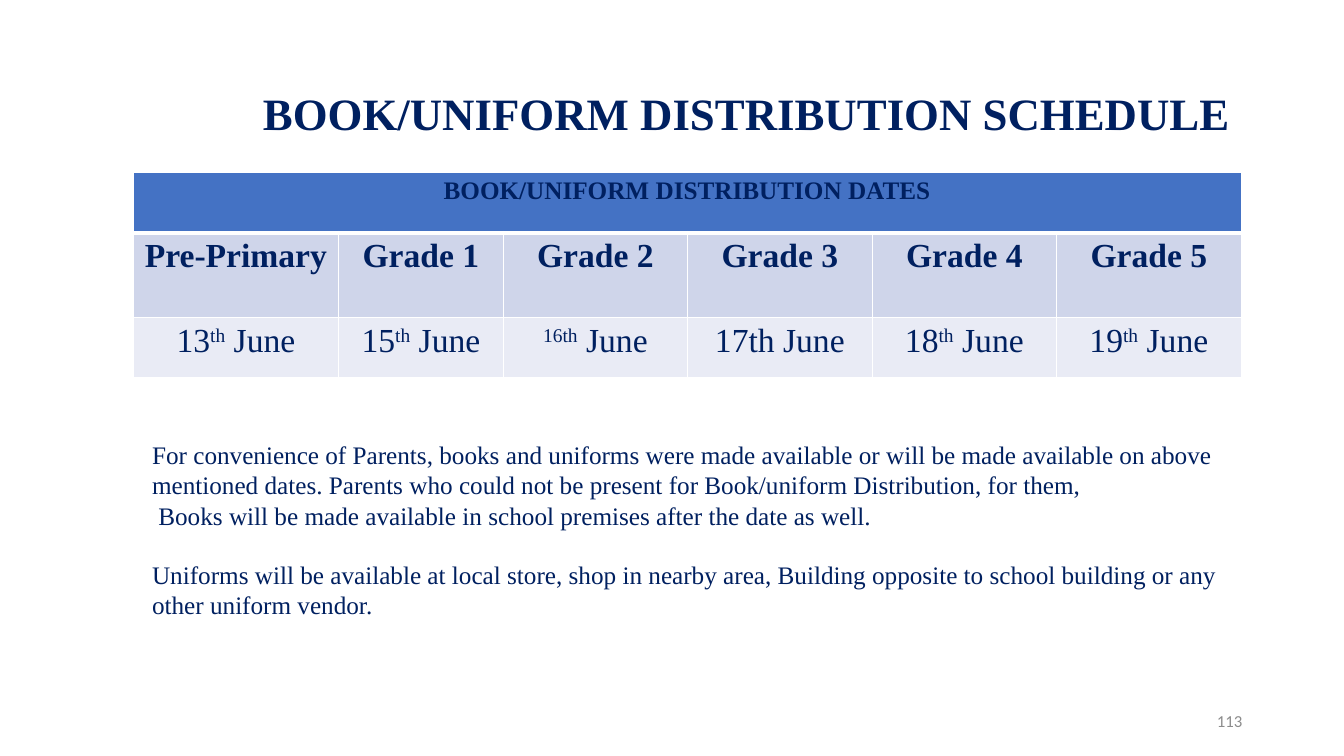
from lxml.etree import SubElement
from pptx import Presentation
from pptx.dml.color import RGBColor
from pptx.enum.text import MSO_ANCHOR, PP_ALIGN
from pptx.oxml.ns import qn
from pptx.util import Inches, Pt

NAVY = RGBColor(0x00, 0x20, 0x60)
GRAY = RGBColor(0x8C, 0x8C, 0x8C)
WHITE = RGBColor(0xFF, 0xFF, 0xFF)
HEADER_BLUE = RGBColor(0x44, 0x72, 0xC4)
GRADE_BLUE = RGBColor(0xCF, 0xD5, 0xEA)
DATE_BLUE = RGBColor(0xE9, 0xEB, 0xF5)

COLUMN_WIDTHS = [2.04, 1.63] + [1.83] * 4
ROW_HEIGHTS = [0.6, 0.84, 0.6]
GRADES = ["Pre-Primary"] + [f"Grade {number}" for number in range(1, 6)]
DATES = ["13^th^ June", "15^th^ June", "^16th^ June",
         "17th June", "18^th^ June", "19^th^ June"]
NOTES = [
    "For convenience of Parents, books and uniforms were made available or will be "
    "made available on above mentioned dates. Parents who could not be present for "
    "Book/uniform Distribution, for them,",
    " Books will be made available in school premises after the date as well.",
    "Uniforms will be available at local store, shop in nearby area, Building opposite "
    "to school building or any other uniform vendor.",
]


def write_text(paragraph, text, size=18, font="Times New Roman", color=NAVY,
               bold=False, align=PP_ALIGN.LEFT, space_before=0, line_spacing=1.0):
    """Fill a paragraph; text between two ^ marks is superscript."""
    paragraph.alignment = align
    paragraph.space_before = Pt(space_before)
    paragraph.line_spacing = line_spacing
    for index, part in enumerate(text.split("^")):
        if not part:
            continue
        run = paragraph.add_run()
        run.text = part
        run.font.size = Pt(size)
        run.font.name = font
        run.font.bold = bold
        run.font.color.rgb = color
        if index % 2:
            run._r.get_or_add_rPr().set("baseline", "30000")


def add_text_box(slide, left, top, width, height, anchor=MSO_ANCHOR.TOP):
    box = slide.shapes.add_textbox(Inches(left), Inches(top), Inches(width), Inches(height))
    box.text_frame.word_wrap = True
    box.text_frame.vertical_anchor = anchor
    return box.text_frame


def set_borders(cell, top=1, bottom=1):
    properties = cell._tc.get_or_add_tcPr()
    for side, width in (("L", 1), ("R", 1), ("T", top), ("B", bottom)):
        line = SubElement(properties, qn(f"a:ln{side}"), w=str(Pt(width)))
        fill = SubElement(line, qn("a:solidFill"))
        SubElement(fill, qn("a:srgbClr"), val=str(WHITE))


def format_cell(cell, fill, top=1, bottom=1):
    set_borders(cell, top, bottom)
    cell.fill.solid()
    cell.fill.fore_color.rgb = fill


def add_schedule(slide):
    frame = slide.shapes.add_table(
        len(ROW_HEIGHTS), len(COLUMN_WIDTHS), Inches(1.32), Inches(1.71),
        Inches(sum(COLUMN_WIDTHS)), Inches(sum(ROW_HEIGHTS)))
    table = frame.table
    for column, width in zip(table.columns, COLUMN_WIDTHS):
        column.width = Inches(width)
    for row, height in zip(table.rows, ROW_HEIGHTS):
        row.height = Inches(height)

    for column, (grade, date) in enumerate(zip(GRADES, DATES)):
        header, grade_cell, date_cell = (table.cell(row, column) for row in range(3))
        format_cell(header, HEADER_BLUE, bottom=3)
        format_cell(grade_cell, GRADE_BLUE, top=3)
        format_cell(date_cell, DATE_BLUE)
        write_text(grade_cell.text_frame.paragraphs[0], grade, size=24, bold=True,
                   align=PP_ALIGN.CENTER)
        write_text(date_cell.text_frame.paragraphs[0], date, size=24,
                   align=PP_ALIGN.CENTER)

    title_cell = table.cell(0, 0)
    title_cell.merge(table.cell(0, len(COLUMN_WIDTHS) - 1))
    write_text(title_cell.text_frame.paragraphs[0], "BOOK/UNIFORM DISTRIBUTION DATES",
               bold=True, align=PP_ALIGN.CENTER)


def add_notes_text(slide):
    frame = add_text_box(slide, 1.41, 4.31, 11.01, 1.92)
    for index, text in enumerate(NOTES):
        paragraph = frame.add_paragraph() if index else frame.paragraphs[0]
        is_last = index == len(NOTES) - 1
        write_text(paragraph, text, space_before=21 if is_last else 0)


def main():
    presentation = Presentation()
    presentation.slide_width = Inches(13.33)
    presentation.slide_height = Inches(7.5)
    slide = presentation.slides.add_slide(presentation.slide_layouts[6])

    title = add_text_box(slide, 2.51, 0.43, 11.5, 1.45, MSO_ANCHOR.MIDDLE)
    write_text(title.paragraphs[0], "BOOK/UNIFORM DISTRIBUTION SCHEDULE",
               size=32, bold=True, line_spacing=0.9)
    number = add_text_box(slide, 9.42, 6.95, 3, 0.4, MSO_ANCHOR.MIDDLE)
    write_text(number.paragraphs[0], "113", size=12, font="Calibri", color=GRAY,
               align=PP_ALIGN.RIGHT)
    add_schedule(slide)
    add_notes_text(slide)
    presentation.save("out.pptx")


if __name__ == "__main__":
    main()
